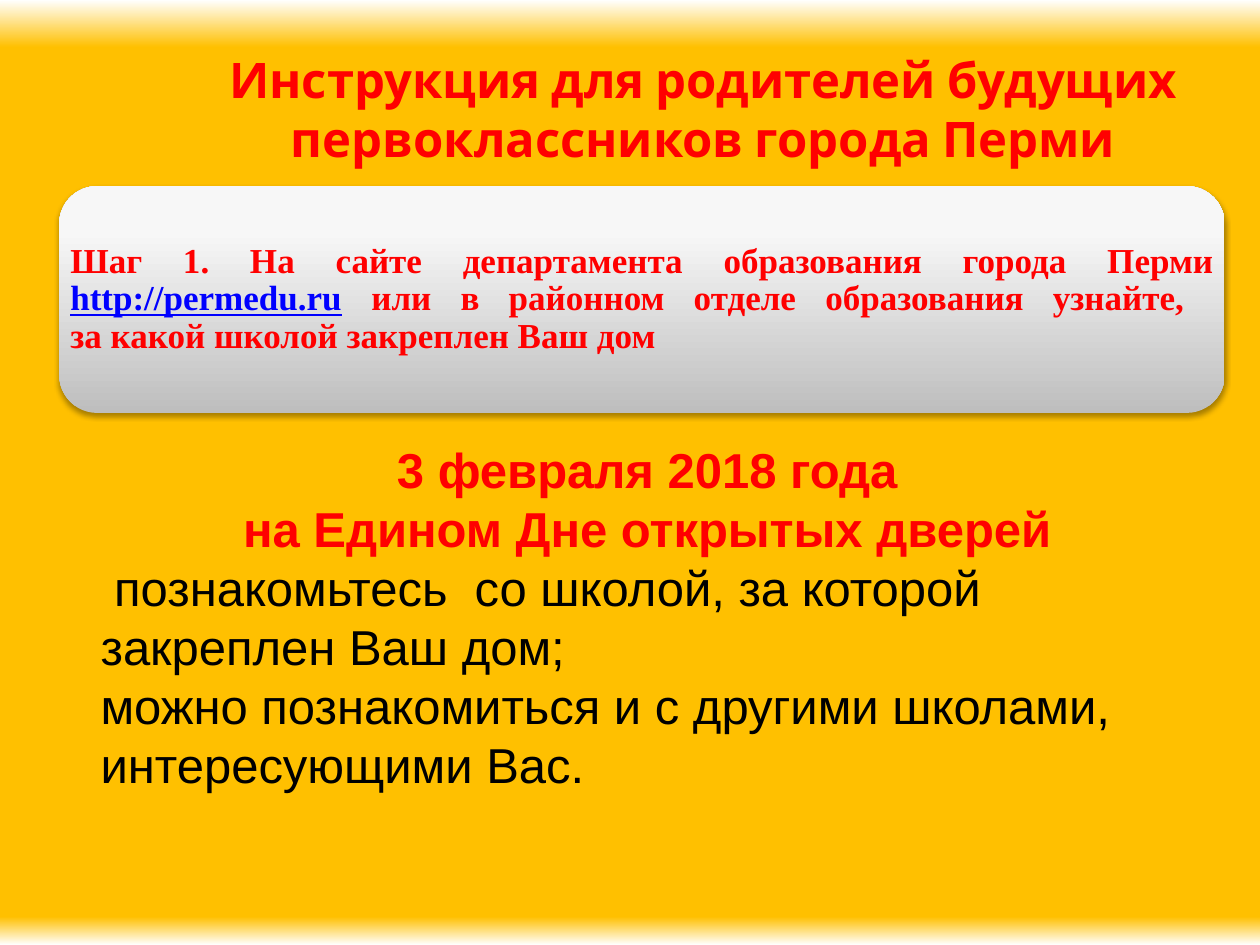
from lxml import etree
from pptx import Presentation
from pptx.dml.color import RGBColor
from pptx.enum.shapes import MSO_SHAPE
from pptx.enum.text import MSO_ANCHOR, PP_ALIGN
from pptx.oxml.ns import qn
from pptx.util import Inches, Pt

ROUNDED = MSO_SHAPE.ROUNDED_RECTANGLE
MIDDLE, TOP = MSO_ANCHOR.MIDDLE, MSO_ANCHOR.TOP
CENTER, LEFT, JUSTIFY = PP_ALIGN.CENTER, PP_ALIGN.LEFT, PP_ALIGN.JUSTIFY

WHITE = RGBColor(0xFF, 0xFF, 0xFF)
AMBER = RGBColor(0xFF, 0xC0, 0x00)
SILVER = RGBColor(0xBE, 0xBE, 0xBE)
PEARL = RGBColor(0xF7, 0xF7, 0xF7)
PALE = RGBColor(0xF8, 0xF8, 0xF8)
RED = RGBColor(0xFF, 0x00, 0x00)
BLUE = RGBColor(0x00, 0x00, 0xFF)
BLACK = RGBColor(0x00, 0x00, 0x00)

WIDTH, HEIGHT = Inches(10), Inches(7.5)
TITLE_AREA = (0.148, 0.052, 0.82, 0.125)
STEP_AREA = (0.047, 0.197, 0.925, 0.24)
OPEN_DAY_AREA = (0.07, 0.459, 0.898, 0.39)


def place(area):
    left, top, width, height = area
    return [int(share * side) for share, side in
            zip((left, top, width, height), (WIDTH, HEIGHT) * 2)]


def add_element(parent, tag, **attributes):
    return etree.SubElement(parent, qn(tag), attributes)


def set_gradient(fill, owner, angle, stops):
    fill.gradient()
    fill.gradient_angle = angle
    stop_list = owner.find(".//" + qn("a:gsLst"))
    for old_stop in list(stop_list):
        stop_list.remove(old_stop)
    for percent, color in stops:
        stop = add_element(stop_list, "a:gs", pos=str(percent * 1000))
        add_element(stop, "a:srgbClr", val=str(color))


def add_soft_shadow(shape):
    shape.shadow.inherit = False
    effects = shape.element.spPr.find(qn("a:effectLst"))
    shadow = add_element(effects, "a:outerShdw", blurRad=str(Pt(3.1)),
                         dist=str(Pt(1.8)), dir="5400000", rotWithShape="0")
    color = add_element(shadow, "a:srgbClr", val=str(BLACK))
    add_element(color, "a:alpha", val="35000")


def style(paragraph, font_name, size, color, bold, align):
    paragraph.alignment = align
    font = paragraph.font
    font.name, font.size, font.bold = font_name, Pt(size), bold
    if color is not None:
        font.color.rgb = color


def add_text(slide, area, anchor, font_name, size, lines):
    frame = slide.shapes.add_textbox(*place(area)).text_frame
    frame.word_wrap = True
    frame.vertical_anchor = anchor
    for index, (text, color, bold, align) in enumerate(lines):
        paragraph = frame.add_paragraph() if index else frame.paragraphs[0]
        paragraph.text = text
        style(paragraph, font_name, size, color, bold, align)


def add_step_card(slide, area, parts):
    card = slide.shapes.add_shape(ROUNDED, *place(area))
    set_gradient(card.fill, card.element, 90,
                 [(0, SILVER), (80, PEARL), (100, PALE)])
    card.line.fill.background()
    add_soft_shadow(card)
    frame = card.text_frame
    frame.word_wrap = True
    frame.vertical_anchor = MIDDLE
    frame.margin_left = frame.margin_right = 0
    frame.margin_top = frame.margin_bottom = 0
    paragraph = frame.paragraphs[0]
    paragraph.line_spacing = 0.9
    style(paragraph, "Times New Roman", 20, None, True, JUSTIFY)
    for text, color, underlined in parts:
        for index, line in enumerate(text.split("\n")):
            if index:
                paragraph.add_line_break()
            run = paragraph.add_run()
            run.text = line
            run.font.color.rgb = color
            run.font.underline = underlined


def main():
    presentation = Presentation()
    presentation.slide_width, presentation.slide_height = WIDTH, HEIGHT
    slide = presentation.slides.add_slide(presentation.slide_layouts[6])
    set_gradient(slide.background.fill, slide.element, 270,
                 [(0, WHITE), (5, AMBER), (97, AMBER), (100, WHITE)])

    add_text(slide, TITLE_AREA, MIDDLE, "Cabin", 28, [
        ("Инструкция для родителей будущих первоклассников города Перми",
         RED, True, CENTER),
    ])
    add_step_card(slide, STEP_AREA, [
        ("Шаг 1. На сайте департамента образования города Перми ", RED, False),
        ("http://permedu.ru", BLUE, True),
        (" или в районном отделе образования узнайте, \n"
         "за какой школой закреплен Ваш дом", RED, False),
    ])
    add_text(slide, OPEN_DAY_AREA, TOP, "Arial", 28, [
        ("3 февраля 2018 года ", RED, True, CENTER),
        ("на Едином Дне открытых дверей ", RED, True, CENTER),
        (" познакомьтесь  со школой, за которой закреплен Ваш дом;",
         BLACK, False, LEFT),
        ("можно познакомиться и с другими школами, интересующими Вас.",
         BLACK, False, LEFT),
    ])
    presentation.save("out.pptx")


if __name__ == "__main__":
    main()
